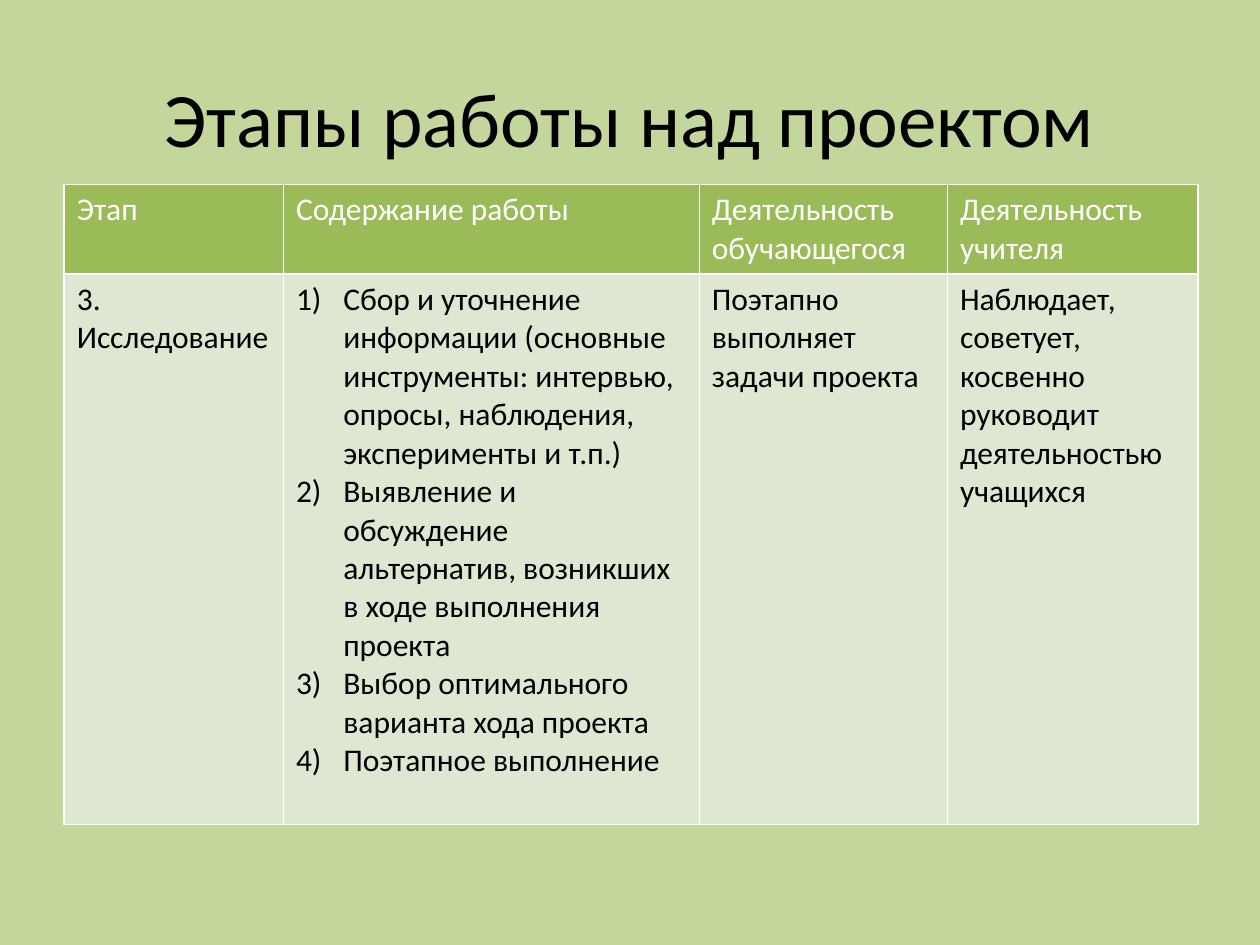
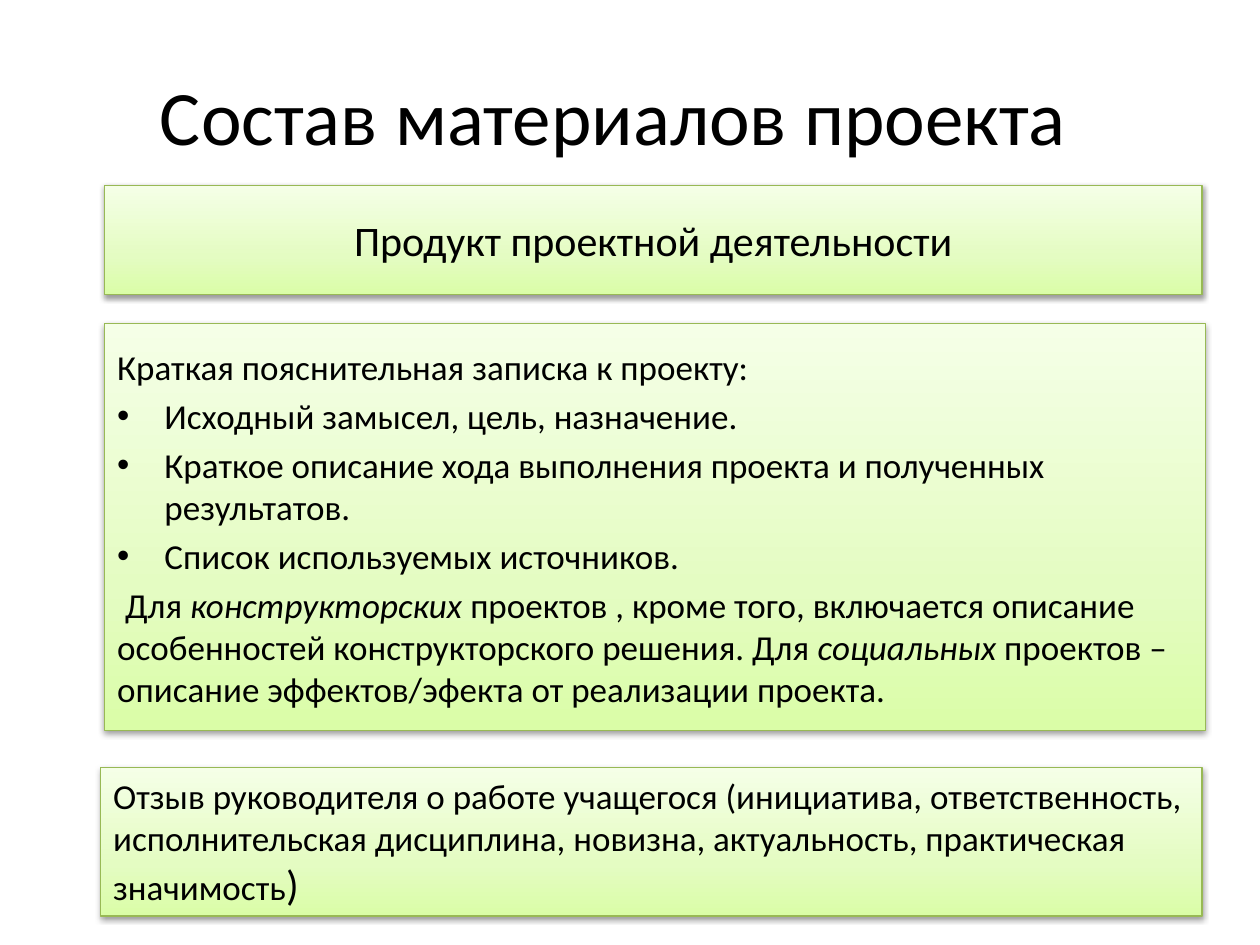
from dataclasses import dataclass
from typing import NamedTuple

from lxml import etree
from pptx import Presentation
from pptx import util as u
from pptx.dml.color import RGBColor
from pptx.enum import shapes, text
from pptx.oxml import parse_xml
from pptx.oxml.ns import nsdecls, qn

BLACK = RGBColor(0x00, 0x00, 0x00)
WHITE = RGBColor(0xFF, 0xFF, 0xFF)
PALE_GREEN = RGBColor(0xC3, 0xD6, 0x9B)
HEADER_GREEN = RGBColor(0x9B, 0xBB, 0x59)
CELL_GREEN = RGBColor(0xDE, 0xE7, 0xD1)
EDGE_GREEN = RGBColor(0x98, 0xB9, 0x55)
PANEL_STOPS = (
    (0, RGBColor(0xDA, 0xFD, 0xA7)),
    (35, RGBColor(0xE4, 0xFC, 0xC2)),
    (100, RGBColor(0xF5, 0xFF, 0xE7)),
)

FONT = "Calibri"
WIDTH, HEIGHT = u.Inches(10), u.Inches(7.5)
COLUMN, ROW = WIDTH / 100, HEIGHT / 75
HANGING = u.Inches(0.375)
BULLET = ("a:buChar", {"char": "•"})
NUMBER = ("a:buAutoNum", {"type": "arabicParenR"})
NO_MARK = ("a:buNone", {})


class Box(NamedTuple):
    col: float
    row: float
    cols: float
    rows: float

    def emu(self) -> tuple[int, int, int, int]:
        return (round(self.col * COLUMN), round(self.row * ROW),
                round(self.cols * COLUMN), round(self.rows * ROW))


class Run(NamedTuple):
    text: str
    italic: bool | None = None
    size: float | None = None


@dataclass
class Para:
    runs: list[Run]
    mark: tuple[str, dict[str, str]] = NO_MARK


@dataclass
class Panel:
    box: Box
    paras: list[Para]
    size: float = 20
    align: text.PP_ALIGN = text.PP_ALIGN.LEFT
    space: float = 0


def plain(words: str, mark: tuple[str, dict[str, str]] = NO_MARK) -> Para:
    return Para([Run(words)], mark)


def write(tf, paras: list[Para], size: float, color: RGBColor = BLACK,
          align: text.PP_ALIGN = text.PP_ALIGN.LEFT, space: float = 0) -> None:
    tf.word_wrap = True
    for i, para in enumerate(paras):
        p = tf.paragraphs[0] if i == 0 else tf.add_paragraph()
        p.alignment = align
        p.space_before = u.Pt(space)
        p.font.name, p.font.size, p.font.bold = FONT, u.Pt(size), False
        p.font.color.rgb = color
        indent = 0 if para.mark is NO_MARK else HANGING
        pPr = p._p.get_or_add_pPr()
        pPr.set("marL", str(indent))
        pPr.set("indent", str(-indent))
        tag, attrs = para.mark
        mark = etree.Element(qn(tag), attrs)
        pPr.find(qn("a:defRPr")).addprevious(mark)
        for run in para.runs:
            r = p.add_run()
            r.text = run.text
            if run.italic:
                r.font.italic = True
            if run.size:
                r.font.size = u.Pt(run.size)


def place(sp, box: Box) -> None:
    sp.left, sp.top, sp.width, sp.height = box.emu()


def add_titled_slide(prs, layout: int, background: RGBColor, title: str, box: Box):
    s = prs.slides.add_slide(prs.slide_layouts[layout])
    s.background.fill.solid()
    s.background.fill.fore_color.rgb = background
    sp = s.shapes.title
    place(sp, box)
    tf = sp.text_frame
    write(tf, [plain(title)], 44, align=text.PP_ALIGN.CENTER)
    tf.vertical_anchor = text.MSO_ANCHOR.MIDDLE
    tf.auto_size = text.MSO_AUTO_SIZE.NONE
    return s


def style_panel(sp, panel: Panel) -> None:
    place(sp, panel.box)
    stops = "".join(f'<a:gs pos="{pos * 1000}"><a:srgbClr val="{color}"/></a:gs>'
                    for pos, color in PANEL_STOPS)
    sp.fill.gradient()
    spPr = sp._element.spPr
    gradient = parse_xml(
        f'<a:gradFill {nsdecls("a")} rotWithShape="1"><a:gsLst>{stops}</a:gsLst>'
        '<a:lin ang="16200000" scaled="0"/></a:gradFill>')
    spPr.replace(spPr.find(qn("a:gradFill")), gradient)
    sp.line.color.rgb = EDGE_GREEN
    sp.line.width = u.Pt(0.75)
    sp.shadow.inherit = False
    spPr.find(qn("a:effectLst")).append(parse_xml(
        f'<a:outerShdw {nsdecls("a")} blurRad="40000" dist="20000" dir="5400000" '
        'rotWithShape="0"><a:srgbClr val="000000"><a:alpha val="38000"/>'
        '</a:srgbClr></a:outerShdw>'))
    tf = sp.text_frame
    write(tf, panel.paras, panel.size, align=panel.align, space=panel.space)
    tf.vertical_anchor = text.MSO_ANCHOR.MIDDLE
    tf.auto_size = text.MSO_AUTO_SIZE.NONE


def style_cell(cell, paras: list[Para], fill: RGBColor, color: RGBColor) -> None:
    cell.fill.solid()
    cell.fill.fore_color.rgb = fill
    write(cell.text_frame, paras, 18, color)
    tcPr = cell._tc.get_or_add_tcPr()
    for i, side in enumerate(("lnL", "lnR", "lnT", "lnB")):
        tcPr.insert(i, parse_xml(
            f'<a:{side} {nsdecls("a")} w="12700"><a:solidFill>'
            f'<a:srgbClr val="{WHITE}"/></a:solidFill></a:{side}>'))


def add_stage_table(s) -> None:
    widths, heights = (17.4, 33, 19.7, 19.9), (7.1, 43.7)
    header = ("Этап", "Содержание работы", "Деятельность обучающегося",
              "Деятельность учителя")
    steps = (
        "Сбор и уточнение информации (основные инструменты: интервью, опросы, "
        "наблюдения, эксперименты и т.п.)",
        "Выявление и обсуждение альтернатив, возникших в ходе выполнения проекта",
        "Выбор оптимального варианта хода проекта",
        "Поэтапное выполнение",
    )
    stage = (
        [plain("3. Исследование")],
        [plain(step, NUMBER) for step in steps],
        [plain("Поэтапно выполняет задачи проекта")],
        [plain("Наблюдает, советует, косвенно руководит деятельностью учащихся")],
    )
    box = Box(5.1, 14.65, sum(widths), sum(heights))
    table = s.shapes.add_table(2, len(widths), *box.emu()).table
    table.first_row = table.horz_banding = False
    for column, width in zip(table.columns, widths):
        column.width = round(width * COLUMN)
    for row, height in zip(table.rows, heights):
        row.height = round(height * ROW)
    for i, (name, paras) in enumerate(zip(header, stage)):
        style_cell(table.cell(0, i), [plain(name)], HEADER_GREEN, WHITE)
        style_cell(table.cell(1, i), paras, CELL_GREEN, BLACK)


def build_stages(prs) -> None:
    s = add_titled_slide(prs, 5, PALE_GREEN, "Этапы работы над проектом",
                         Box(5, 3, 90, 12.5))
    add_stage_table(s)


def build_materials(prs) -> None:
    s = add_titled_slide(prs, 1, WHITE, "Состав материалов проекта",
                         Box(10.6, 2.9, 76.2, 12.4))
    note = Panel(Box(8.3, 25.7, 87.4, 32.3), [
        plain("Краткая пояснительная записка к проекту:"),
        plain("Исходный замысел, цель, назначение.", BULLET),
        plain("Краткое описание хода выполнения проекта и полученных результатов.",
              BULLET),
        plain("Список используемых источников.", BULLET),
        Para([
            Run(" Для "),
            Run("конструкторских ", italic=True),
            Run("проектов , кроме того, включается описание особенностей "
                "конструкторского решения. Для "),
            Run("социальных", italic=True),
            Run(" проектов – описание эффектов/эфекта от реализации проекта."),
        ]),
    ], space=4)
    product = Panel(Box(8.3, 14.7, 87.1, 8.7),
                    [plain("Продукт проектной деятельности")],
                    size=24, align=text.PP_ALIGN.CENTER)
    review = Panel(Box(8, 60.9, 87.4, 11.8), [Para([
        Run("Отзыв руководителя о работе учащегося (инициатива, ответственность, "
            "исполнительская дисциплина, новизна, актуальность, практическая "
            "значимость"),
        Run(")", size=24),
    ])])
    style_panel(s.placeholders[1], note)
    for panel in (product, review):
        sp = s.shapes.add_shape(shapes.MSO_SHAPE.RECTANGLE, *panel.box.emu())
        style_panel(sp, panel)


def main() -> None:
    prs = Presentation()
    prs.slide_width, prs.slide_height = WIDTH, HEIGHT
    build_stages(prs)
    build_materials(prs)
    prs.save("out.pptx")


if __name__ == "__main__":
    main()
